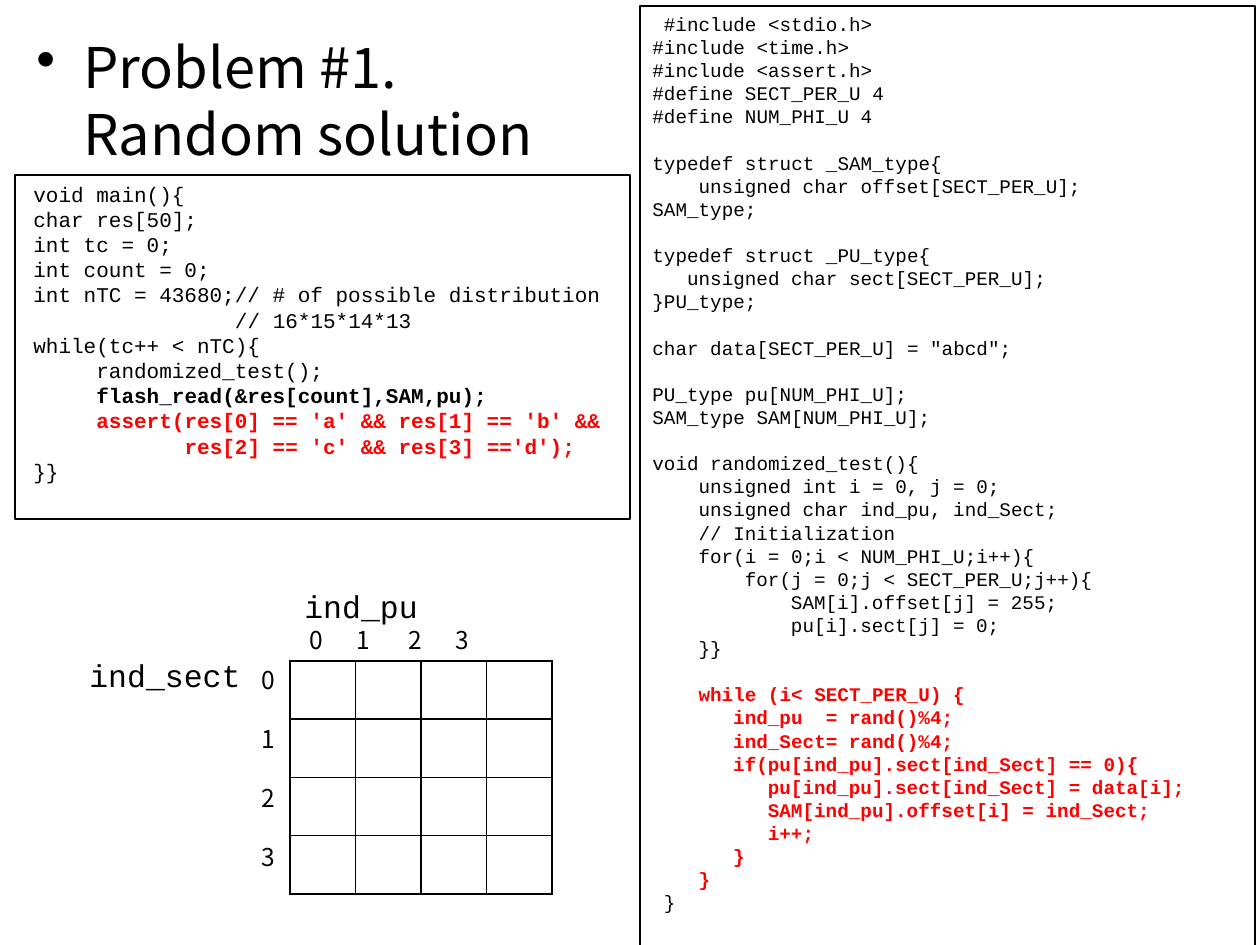
import pptx
import pptx.dml.color
import pptx.enum.shapes
import pptx.enum.text
import pptx.oxml.ns
import pptx.util
from lxml import etree

PX = 914400 // 126
BLACK = pptx.dml.color.RGBColor(0, 0, 0)
WHITE = pptx.dml.color.RGBColor(255, 255, 255)
RED = pptx.dml.color.RGBColor(255, 0, 0)
MONO = "Courier New"
SANS = "Noto Sans CJK KR"
LINE_RATIO = 1.2
CHAR_RATIO = 0.6

PLAIN = {"bold": False, "color": BLACK}
STRONG = {"bold": True, "color": BLACK}
ALERT = {"bold": True, "color": RED}

MAIN_CODE = [
    (PLAIN, """void main(){
char res[50];
int tc = 0;
int count = 0;
int nTC = 43680;// # of possible distribution
                // 16*15*14*13
while(tc++ < nTC){
     randomized_test();"""),
    (STRONG, "     flash_read(&res[count],SAM,pu);"),
    (ALERT, """     assert(res[0] == 'a' && res[1] == 'b' &&
            res[2] == 'c' && res[3] =='d');"""),
    (PLAIN, "}}"),
]

TEST_CODE = [
    (PLAIN, """ #include <stdio.h>
#include <time.h>
#include <assert.h>
#define SECT_PER_U 4
#define NUM_PHI_U 4

typedef struct _SAM_type{
    unsigned char offset[SECT_PER_U];
SAM_type;

typedef struct _PU_type{
   unsigned char sect[SECT_PER_U];
}PU_type;

char data[SECT_PER_U] = "abcd";

PU_type pu[NUM_PHI_U];
SAM_type SAM[NUM_PHI_U];

void randomized_test(){
    unsigned int i = 0, j = 0;
    unsigned char ind_pu, ind_Sect;
    // Initialization
    for(i = 0;i < NUM_PHI_U;i++){
        for(j = 0;j < SECT_PER_U;j++){
            SAM[i].offset[j] = 255;
            pu[i].sect[j] = 0;
    }}
"""),
    (ALERT, """    while (i< SECT_PER_U) {
       ind_pu  = rand()%4;
       ind_Sect= rand()%4;
       if(pu[ind_pu].sect[ind_Sect] == 0){
          pu[ind_pu].sect[ind_Sect] = data[i];
          SAM[ind_pu].offset[i] = ind_Sect;
          i++;
       }
    }"""),
    (PLAIN, " }"),
]


def emu(box):
    """Turn a box in px into EMU lengths."""
    return [pptx.util.Emu(length * PX) for length in box]


def write_line(paragraph, text, size, face, look=PLAIN, gap=0):
    """Fill a paragraph with one run, after a gap counted in lines."""
    paragraph.line_spacing = pptx.util.Pt(round(size * LINE_RATIO, 1))
    paragraph.space_before = pptx.util.Pt(round(gap * size * LINE_RATIO, 1))
    run = paragraph.add_run()
    run.text = text
    font = {"size": pptx.util.Pt(size), "name": face, "bold": look["bold"]}
    for attribute, value in font.items():
        setattr(run.font, attribute, value)
    run.font.color.rgb = look["color"]


def add_code(slide, box, sections, size, margin=0):
    """Place a framed code listing, indented by paragraph margins."""
    listing = slide.shapes.add_shape(pptx.enum.shapes.MSO_SHAPE.RECTANGLE, *emu(box))
    listing.shadow.inherit = False
    listing.fill.solid()
    listing.fill.fore_color.rgb = WHITE
    listing.line.color.rgb = BLACK
    listing.line.width = pptx.util.Pt(0.75)
    frame = listing.text_frame
    frame.word_wrap = True
    frame.vertical_anchor = pptx.enum.text.MSO_ANCHOR.TOP
    lines = [(look, line) for look, code in sections for line in code.split("\n")]
    paragraph, gap = frame.paragraphs[0], 0
    for index, (look, line) in enumerate(lines):
        code = line.lstrip()
        if not code:
            gap += 1
            continue
        if index:
            paragraph = frame.add_paragraph()
        paragraph.alignment = pptx.enum.text.PP_ALIGN.JUSTIFY
        write_line(paragraph, code, size, MONO, look, gap)
        indent = pptx.util.Pt((len(line) - len(code)) * size * CHAR_RATIO)
        paragraph._p.get_or_add_pPr().set("marL", str(indent + margin * PX))
        gap = 0


def add_label(slide, box, lines, size, face, gap=0):
    """Place plain text lines and return their paragraphs."""
    frame = slide.shapes.add_textbox(*emu(box)).text_frame
    frame.word_wrap = True
    for index, line in enumerate(lines):
        paragraph = frame.add_paragraph() if index else frame.paragraphs[0]
        write_line(paragraph, line, size, face, gap=gap if index else 0)
    return frame.paragraphs


def add_heading(slide, box):
    """Place the bulleted heading with a hanging indent."""
    heading = add_label(slide, box, ["Problem #1. Random solution"], 32, SANS)[0]
    properties = heading._p.get_or_add_pPr()
    for attribute, length in {"marL": 47, "indent": -47}.items():
        properties.set(attribute, str(length * PX))
    etree.SubElement(properties, pptx.oxml.ns.qn("a:buChar")).set("char", "•")


def outline_cell(cell):
    """Give a cell black borders and a white fill."""
    properties = cell._tc.get_or_add_tcPr()
    for side in ("lnL", "lnR", "lnT", "lnB"):
        border = etree.SubElement(properties, pptx.oxml.ns.qn(f"a:{side}"), w="12700")
        paint = etree.SubElement(border, pptx.oxml.ns.qn("a:solidFill"))
        etree.SubElement(paint, pptx.oxml.ns.qn("a:srgbClr"), val=str(BLACK))
    cell.fill.solid()
    cell.fill.fore_color.rgb = WHITE


def add_sector_grid(slide, box):
    """Place the sector table with its row and column labels around it."""
    left, top, width, height = box
    count = 4
    sectors = slide.shapes.add_table(count, count, *emu(box)).table
    for column in sectors.columns:
        column.width = pptx.util.Emu(width * PX // count)
    for row in sectors.rows:
        row.height = pptx.util.Emu(height * PX // count)
    for cell in sectors.iter_cells():
        outline_cell(cell)
    indices = [str(index) for index in range(count)]
    add_label(slide, (left + 2, top - 80, 140, 50), ["ind_pu"], 18, MONO)
    units = add_label(slide, (left + 7, top - 42, 244, 43), ["\t".join(indices)], 14, SANS)[0]
    tabs = etree.SubElement(units._p.get_or_add_pPr(), pptx.oxml.ns.qn("a:tabLst"))
    for stop in (47, 99, 146):
        etree.SubElement(tabs, pptx.oxml.ns.qn("a:tab"), pos=str(stop * PX), algn="l")
    add_label(slide, (left - 41, top - 2, 82, 221), indices, 14, SANS, gap=1)
    add_label(slide, (left - 213, top - 11, 178, 50), ["ind_sect"], 18, MONO)


def main():
    """Build the slide and save it."""
    deck = pptx.Presentation()
    deck.slide_width, deck.slide_height = emu((1260, 945))
    slide = deck.slides.add_slide(deck.slide_layouts[6])
    add_code(slide, (640, 6, 615, 956), TEST_CODE, 11)
    add_code(slide, (15, 175, 615, 344), MAIN_CODE, 12, margin=6)
    add_heading(slide, (24, 26, 567, 139))
    add_sector_grid(slide, (290, 661, 262, 233))
    deck.save("out.pptx")


if __name__ == "__main__":
    main()
